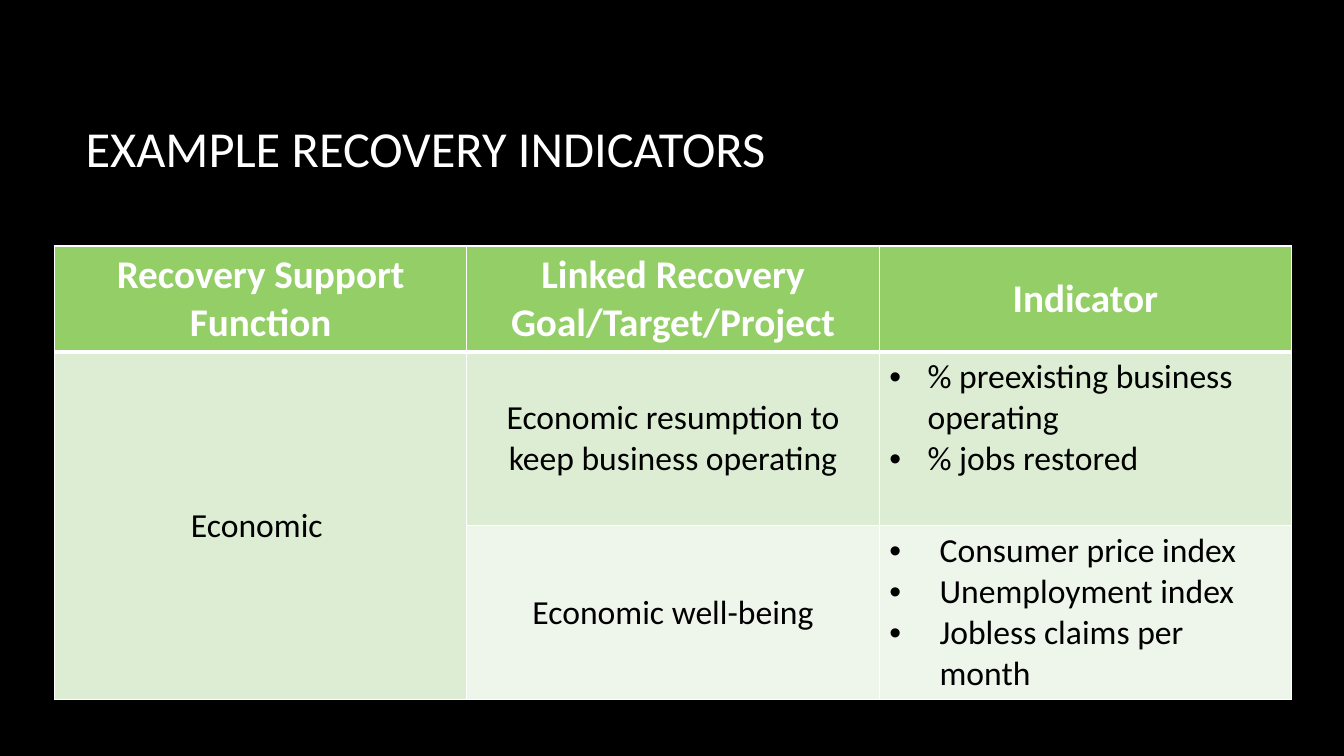
from pptx import Presentation
from pptx.dml.color import RGBColor
from pptx.enum.text import MSO_ANCHOR, PP_ALIGN
from pptx.oxml import parse_xml
from pptx.oxml.ns import nsdecls
from pptx.util import Inches, Pt

TOP, MIDDLE = MSO_ANCHOR.TOP, MSO_ANCHOR.MIDDLE
LEFT, CENTER = PP_ALIGN.LEFT, PP_ALIGN.CENTER
WHITE, BLACK = "FFFFFF", "000000"
GREEN, LIGHT, PALE = "94CE67", "DCEDD3", "EEF6EB"
HEADS = ["Recovery Support Function", "Linked Recovery Goal/Target/Project", "Indicator"]
GOALS = [
    ("Economic resumption to keep business operating", LIGHT, 0.38,
     ["% preexisting business operating", "% jobs restored"]),
    ("Economic well-being", PALE, 0.5,
     ["Consumer price index", "Unemployment index", "Jobless claims per month"]),
]


def color(code):
    return RGBColor.from_string(code)


def write(frame, lines, size=24, ink=BLACK, bold=False, align=CENTER, indent=0):
    frame.word_wrap = True
    for i, line in enumerate(lines):
        para = frame.paragraphs[0] if i == 0 else frame.add_paragraph()
        para.alignment = align
        if indent:
            props = para._p.get_or_add_pPr()
            props.set("marL", str(Inches(indent)))
            props.set("indent", str(-Inches(indent)))
            props.append(parse_xml(f'<a:buFont {nsdecls("a")} typeface="Arial"/>'))
            props.append(parse_xml(f'<a:buChar {nsdecls("a")} char="•"/>'))
        run = para.add_run()
        run.text = line
        run.font.name = "Calibri"
        run.font.size = Pt(size)
        run.font.bold = bold
        run.font.color.rgb = color(ink)


def border(cell, top=1, base=1):
    props = cell._tc.get_or_add_tcPr()
    for i, (side, width) in enumerate(zip("LRTB", (1, 1, top, base))):
        props.insert(i, parse_xml(
            f'<a:ln{side} {nsdecls("a")} w="{Pt(width)}"><a:solidFill>'
            f'<a:srgbClr val="{WHITE}"/></a:solidFill></a:ln{side}>'))


def fill_cell(cell, lines, fill, anchor=MIDDLE, **style):
    cell.fill.solid()
    cell.fill.fore_color.rgb = color(fill)
    cell.vertical_anchor = anchor
    write(cell.text_frame, lines, **style)


def add_title(slide, left, top, width, height):
    box = slide.shapes.add_textbox(*map(Inches, (left, top, width, height)))
    box.text_frame.vertical_anchor = MIDDLE
    write(box.text_frame, ["EXAMPLE RECOVERY INDICATORS"], size=36, ink=WHITE, align=LEFT)


def add_grid(slide, left, top, width, height):
    shape = slide.shapes.add_table(3, 3, *map(Inches, (left, top, width, height)))
    table = shape.table
    head = 1.05
    for col in table.columns:
        col.width = Inches(width / 3)
    for row, tall in zip(table.rows, (head, (height - head) / 2, (height - head) / 2)):
        row.height = Inches(tall)
    for i, text in enumerate(HEADS):
        fill_cell(table.cell(0, i), [text], GREEN, MIDDLE if i == 2 else TOP,
                  size=28, ink=WHITE, bold=True)
    table.cell(1, 0).merge(table.cell(2, 0))
    fill_cell(table.cell(1, 0), ["Economic "], LIGHT)
    for i, (goal, fill, indent, signs) in enumerate(GOALS, 1):
        fill_cell(table.cell(i, 1), [goal], fill)
        fill_cell(table.cell(i, 2), signs, fill, TOP, align=LEFT, indent=indent)
    for i in range(3):
        for j in range(3):
            border(table.cell(i, j), top=3 if i == 1 else 1, base=3 if i == 0 else 1)


def main():
    deck = Presentation()
    deck.slide_width, deck.slide_height = Inches(13.33), Inches(7.5)
    slide = deck.slides.add_slide(deck.slide_layouts[6])
    slide.background.fill.solid()
    slide.background.fill.fore_color.rgb = color(BLACK)
    add_title(slide, 0.75, 0.67, 11.08, 1.59)
    add_grid(slide, 0.54, 2.44, 12.27, 4.5)
    deck.save("out.pptx")


if __name__ == "__main__":
    main()
